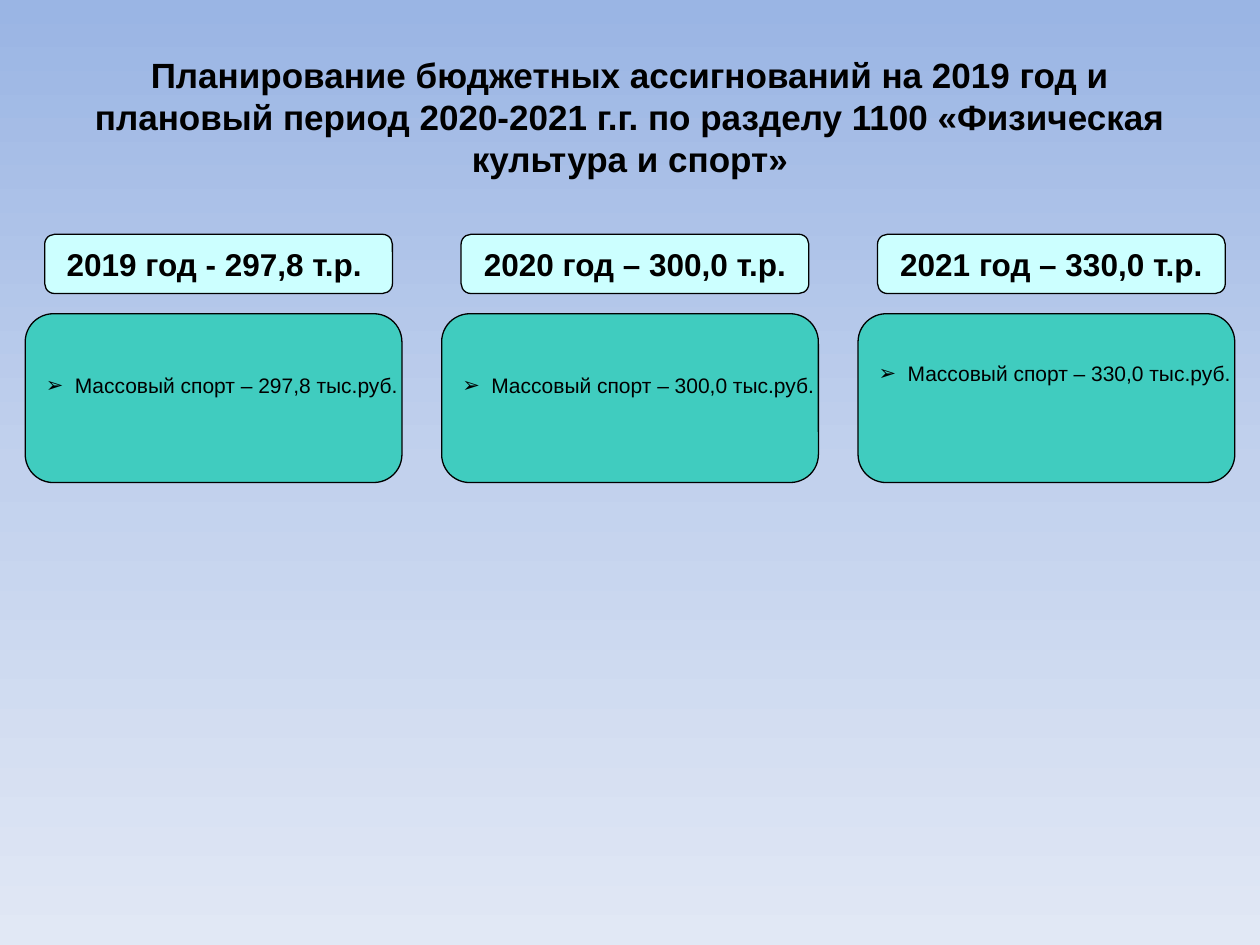
import copy

import pptx
import pptx.dml.color
import pptx.enum.shapes
import pptx.enum.text
import pptx.util
from lxml import etree
from pptx.util import Inches

# Content: year heading, item, space under the item in inches
TITLE = ("Планирование бюджетных ассигнований на 2019 год и плановый период "
         "2020-2021 г.г. по разделу 1100 «Физическая культура и спорт»")
YEARS = [
    ("2019 год - 297,8 т.р. ", "Массовый спорт – 297,8 тыс.руб.", 0.25),
    ("2020 год – 300,0 т.р.", "Массовый спорт – 300,0 тыс.руб.", 0.25),
    ("2021 год – 330,0 т.р.", "Массовый спорт – 330,0 тыс.руб.", 0.44),
]
BACKGROUND = [(0, "9AB5E4"), (0.5, "C2D1ED"), (1, "E1E8F5")]

# Column grid
LEFT, STEP = 0.2, 3.305
CARD_WIDTH, HEADING_WIDTH = 2.99, 2.76
HEADING_INDENT = 0.155
BULLET_INDENT = 0.23


def color(value):
    return pptx.dml.color.RGBColor.from_string(value)


def set_font(para, size, bold=False):
    para.font.name = "Arial"
    para.font.size = pptx.util.Pt(size)
    para.font.bold = bold
    para.font.color.rgb = color("000000")


def add_box(page, left, top, width, height, fill, text):
    box = page.shapes.add_shape(
        pptx.enum.shapes.MSO_SHAPE.ROUNDED_RECTANGLE,
        Inches(left), Inches(top), Inches(width), Inches(height))
    box.shadow.inherit = False
    box.fill.solid()
    box.fill.fore_color.rgb = color(fill)
    box.line.color.rgb = color("000000")
    box.line.width = pptx.util.Pt(0.75)
    frame = box.text_frame
    frame.word_wrap = False
    frame.vertical_anchor = pptx.enum.text.MSO_ANCHOR.MIDDLE
    frame.text = text
    return frame


def add_bullet(para, character):
    properties = para._p.get_or_add_pPr()
    properties.set("marL", str(Inches(BULLET_INDENT)))
    properties.set("indent", str(-Inches(BULLET_INDENT)))
    for tag, name, value in (("buFont", "typeface", "Arial"),
                             ("buChar", "char", character)):
        etree.SubElement(properties, pptx.oxml.ns.qn("a:" + tag)).set(name, value)


deck = pptx.Presentation()
deck.slide_width, deck.slide_height = Inches(10), Inches(7.5)
page = deck.slides.add_slide(deck.slide_layouts[5])

# Background gradient, top to bottom
fill = page.background.fill
fill.gradient()
fill.gradient_angle = 270
first_stop = fill.gradient_stops[0]._gs
first_stop.addnext(copy.deepcopy(first_stop))
for stop, (position, value) in zip(fill.gradient_stops, BACKGROUND):
    stop.position = position
    stop.color.rgb = color(value)

# Title
title = page.shapes.title
title.left, title.top = Inches(0.5), Inches(0.3)
title.width, title.height = Inches(9), Inches(1.25)
title.text_frame.text = TITLE
title.text_frame.vertical_anchor = pptx.enum.text.MSO_ANCHOR.MIDDLE
title_para = title.text_frame.paragraphs[0]
title_para.alignment = pptx.enum.text.PP_ALIGN.CENTER
set_font(title_para, 20, bold=True)

# One heading and one card per year
for column, (heading, item, space_below) in enumerate(YEARS):
    left = LEFT + column * STEP
    frame = add_box(page, left + HEADING_INDENT, 1.86, HEADING_WIDTH, 0.47,
                    "CCFFFF", heading)
    frame.paragraphs[0].alignment = pptx.enum.text.PP_ALIGN.CENTER
    set_font(frame.paragraphs[0], 18, bold=True)

    frame = add_box(page, left, 2.49, CARD_WIDTH, 1.34, "40CCBF", item)
    frame.margin_bottom = Inches(space_below)
    frame.paragraphs[0].alignment = pptx.enum.text.PP_ALIGN.LEFT
    add_bullet(frame.paragraphs[0], "➢")
    set_font(frame.paragraphs[0], 12)

deck.save("out.pptx")
